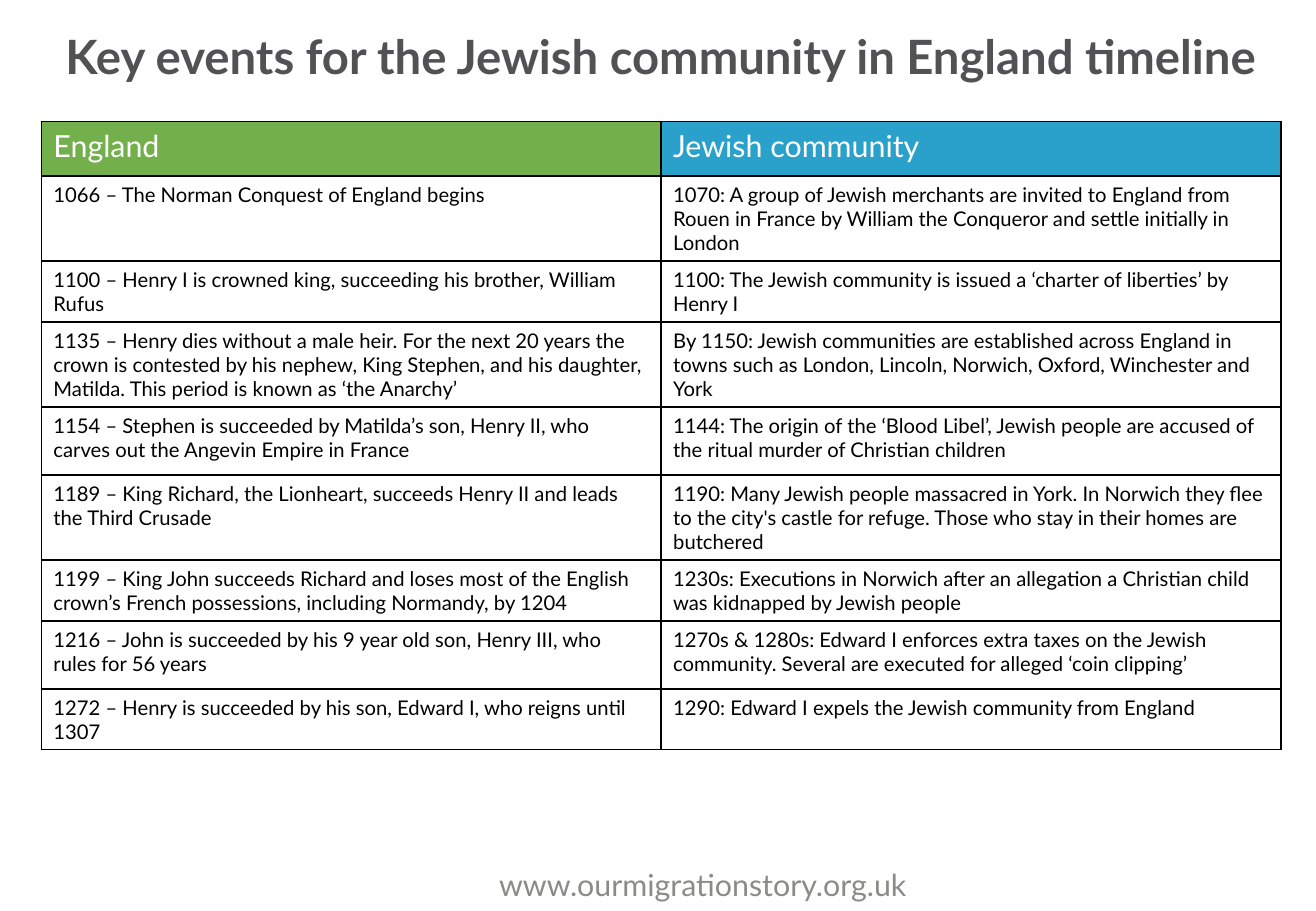
import pptx
import pptx.util
import pptx.dml.color
import pptx.enum.text
from lxml import etree
from pptx.util import Inches, Pt

RGBColor = pptx.dml.color.RGBColor
GREEN = RGBColor(0x73, 0xAF, 0x4B)
BLUE = RGBColor(0x2A, 0xA1, 0xCB)
WHITE = RGBColor(0xFF, 0xFF, 0xFF)
BLACK = RGBColor(0, 0, 0)
TITLE_GREY = RGBColor(0x52, 0x51, 0x53)
FOOTER_GREY = RGBColor(0x8B, 0x8B, 0x89)
FONT = "Lato"

TITLE = "Key events for the Jewish community in England timeline"
WEBSITE = "www.ourmigrationstory.org.uk"
HEADERS = [("England", GREEN), ("Jewish community", BLUE)]
HEADER_HEIGHT = 0.45
# Row height in inches, event in England, event in the Jewish community
EVENTS = [
    (0.7, "1066 – The Norman Conquest of England begins",
     "1070: A group of Jewish merchants are invited to England from Rouen in France "
     "by William the Conqueror and settle initially in London"),
    (0.5, "1100 – Henry I is crowned king, succeeding his brother, William Rufus",
     "1100: The Jewish community is issued a ‘charter of liberties’ by Henry I"),
    (0.7, "1135 – Henry dies without a male heir. For the next 20 years the crown is "
     "contested by his nephew, King Stephen, and his daughter, Matilda. This period is "
     "known as ‘the Anarchy’",
     "By 1150: Jewish communities are established across England in towns such as "
     "London, Lincoln, Norwich, Oxford, Winchester and York"),
    (0.56, "1154 – Stephen is succeeded by Matilda’s son, Henry II, who carves out the "
     "Angevin Empire in France",
     "1144: The origin of the ‘Blood Libel’, Jewish people are accused of the ritual "
     "murder of Christian children"),
    (0.7, "1189 – King Richard, the Lionheart, succeeds Henry II and leads the Third Crusade",
     "1190: Many Jewish people massacred in York. In Norwich they flee to the city's "
     "castle for refuge. Those who stay in their homes are butchered"),
    (0.5, "1199 – King John succeeds Richard and loses most of the English crown’s French "
     "possessions, including Normandy, by 1204",
     "1230s: Executions in Norwich after an allegation a Christian child was kidnapped "
     "by Jewish people"),
    (0.56, "1216 – John is succeeded by his 9 year old son, Henry III, who rules for 56 years",
     "1270s & 1280s: Edward I enforces extra taxes on the Jewish community. Several are "
     "executed for alleged ‘coin clipping’"),
    (0.5, "1272 – Henry is succeeded by his son, Edward I, who reigns until 1307",
     "1290: Edward I expels the Jewish community from England"),
]


def write(tf, text, size, color, bold=False):
    p = tf.paragraphs[0]
    p.text = text
    p.font.name = FONT
    p.font.size = Pt(size)
    p.font.bold = bold
    p.font.color.rgb = color
    return p


def add_borders(cell):
    """Draw a 1 pt black line on each side; call before the cell is filled."""
    tc_pr = cell._tc.get_or_add_tcPr()
    ns = pptx.oxml.ns.nsdecls("a")
    for side in ("lnL", "lnR", "lnT", "lnB"):
        tc_pr.append(etree.fromstring(
            f'<a:{side} {ns} w="12700"><a:solidFill><a:srgbClr val="{BLACK}"/>'
            f'</a:solidFill></a:{side}>'))


def fill_cell(cell, text, size, color, fill=None):
    add_borders(cell)
    if fill is None:
        cell.fill.background()
    else:
        cell.fill.solid()
        cell.fill.fore_color.rgb = fill
    write(cell.text_frame, text, size, color)


def add_timeline(s):
    heights = [HEADER_HEIGHT] + [event[0] for event in EVENTS]
    table = s.shapes.add_table(len(heights), len(HEADERS), Inches(0.34), Inches(1),
                               Inches(10.2), Inches(sum(heights))).table
    for row, height in zip(table.rows, heights):
        row.height = Inches(height)
    for col, (heading, fill) in enumerate(HEADERS):
        fill_cell(table.cell(0, col), heading, 18, WHITE, fill)
        for row, event in enumerate(EVENTS, 1):
            fill_cell(table.cell(row, col), event[col + 1], 12, BLACK)


def main():
    prs = pptx.Presentation()
    prs.slide_width, prs.slide_height = Inches(10.83), Inches(7.5)
    s = prs.slides.add_slide(prs.slide_layouts[6])

    tf = s.shapes.add_textbox(Inches(0.03), Inches(0.17), Inches(10.81), Inches(0.58)).text_frame
    tf.word_wrap = True
    tf.vertical_anchor = pptx.enum.text.MSO_ANCHOR.BOTTOM
    p = write(tf, TITLE, 28, TITLE_GREY, bold=True)
    p.alignment = pptx.enum.text.PP_ALIGN.CENTER
    p.line_spacing = 0.9

    add_timeline(s)

    tf = s.shapes.add_textbox(Inches(4.01), Inches(7.08), Inches(3.6), Inches(0.4)).text_frame
    tf.word_wrap = False
    tf.auto_size = pptx.enum.text.MSO_AUTO_SIZE.SHAPE_TO_FIT_TEXT
    write(tf, WEBSITE, 18, FOOTER_GREY)

    prs.save("out.pptx")


if __name__ == "__main__":
    main()
